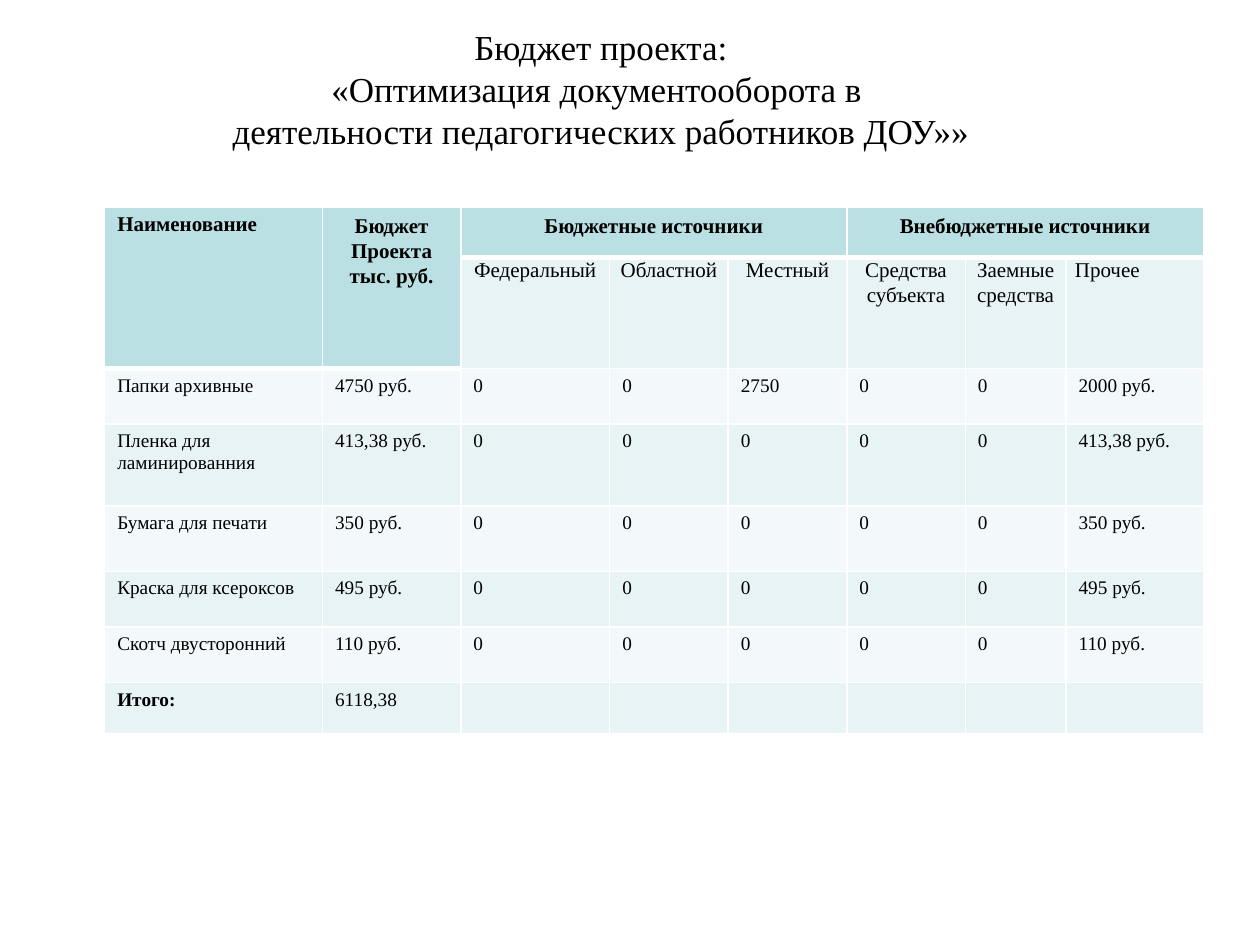
from dataclasses import dataclass

from lxml import etree
from pptx import Presentation
from pptx.dml.color import RGBColor
from pptx.enum.text import MSO_ANCHOR, MSO_AUTO_SIZE, PP_ALIGN
from pptx.oxml.ns import qn
from pptx.util import Cm, Pt

LEFT, CENTER = PP_ALIGN.LEFT, PP_ALIGN.CENTER
TOP, NO_FIT = MSO_ANCHOR.TOP, MSO_AUTO_SIZE.NONE

FONT = "Times New Roman"
BLACK, WHITE = "000000", "FFFFFF"
HEADER, BAND_DARK, BAND_LIGHT = "BBE0E3", "E7F3F4", "F3F9FA"

TITLE = ("Бюджет проекта:\v«Оптимизация документооборота в \v"
         "деятельности педагогических работников ДОУ»»")
COL_WIDTHS = [4.39, 2.79, 3, 2.39, 2.39, 2.39, 2.03, 2.77]
ROW_HEIGHTS = [1.02, 2.24, 1.12, 1.65, 1.32, 1.12, 1.12, 1.02]


@dataclass
class Heading:
    col: int
    text: str
    rows: int = 1
    cols: int = 1
    align: PP_ALIGN = CENTER
    spacing: float = 1.07


@dataclass
class Expense:
    name: str
    budget: str
    local: str = "0"
    other: str = ""

    def values(self) -> list[str]:
        return [self.name, self.budget, "0", "0", self.local, "0", "0",
                self.other or self.budget]


GROUPS = [
    Heading(0, "Наименование", rows=2, align=LEFT, spacing=1.0),
    Heading(1, "Бюджет\nПроекта тыс. руб.", rows=2),
    Heading(2, "Бюджетные источники", cols=3),
    Heading(5, "Внебюджетные источники", cols=3),
]
SOURCES = [
    Heading(2, "Федеральный"),
    Heading(3, "Областной"),
    Heading(4, "Местный"),
    Heading(5, "Средства субъекта"),
    Heading(6, "Заемные средства"),
    Heading(7, "Прочее", align=LEFT),
]
EXPENSES = [
    Expense("Папки архивные", "4750 руб.", "2750", "2000 руб."),
    Expense("Пленка для ламинированния", "413,38 руб."),
    Expense("Бумага для печати", "350 руб."),
    Expense("Краска для ксероксов", "495 руб."),
    Expense("Скотч двусторонний", "110 руб."),
]
TOTAL = ["Итого:", "6118,38"]


def color(value: str) -> RGBColor:
    return RGBColor.from_string(value)


def format_text(tf, size: float, align: PP_ALIGN, bold: bool = False,
                spacing: float = 1.0) -> None:
    for p in tf.paragraphs:
        p.alignment = align
        p.line_spacing = spacing
        for r in p.runs:
            r.font.name = FONT
            r.font.size = Pt(size)
            r.font.bold = bold
            r.font.color.rgb = color(BLACK)


def rule_width(row: int, col: int) -> int:
    """Width of the rule above a cell; it is thick under the main headings."""
    return 3 if row == (2 if col < 2 else 1) else 1


def set_borders(cell, top: int, bottom: int) -> None:
    tc_pr = cell._tc.get_or_add_tcPr()
    sides = {"lnL": 1, "lnR": 1, "lnT": top, "lnB": bottom}
    for i, (side, width) in enumerate(sides.items()):
        ln = etree.Element(qn(f"a:{side}"), w=str(Pt(width)))
        fill = etree.SubElement(ln, qn("a:solidFill"))
        etree.SubElement(fill, qn("a:srgbClr"), val=WHITE)
        tc_pr.insert(i, ln)


def style_cells(table) -> None:
    for row in range(len(ROW_HEIGHTS)):
        for col in range(len(COL_WIDTHS)):
            cell = table.cell(row, col)
            heading = row == 0 or (row == 1 and col < 2)
            band = BAND_DARK if row % 2 else BAND_LIGHT
            cell.fill.solid()
            cell.fill.fore_color.rgb = color(HEADER if heading else band)
            height = cell.span_height if cell.is_merge_origin else 1
            set_borders(cell, rule_width(row, col),
                        rule_width(row + height, col))


def add_headings(table, row: int, headings: list[Heading],
                 bold: bool) -> None:
    for h in headings:
        cell = table.cell(row, h.col)
        if h.rows * h.cols > 1:
            cell.merge(table.cell(row + h.rows - 1, h.col + h.cols - 1))
        cell.text_frame.text = h.text
        format_text(cell.text_frame, 12, h.align, bold, h.spacing)
        if row == 1:
            cell.margin_left = cell.margin_right = Cm(0.18)
            cell.margin_top = cell.margin_bottom = 0


def add_values(table, row: int, values: list[str],
               bold_name: bool = False) -> None:
    for col, value in enumerate(values):
        tf = table.cell(row, col).text_frame
        tf.text = value
        format_text(tf, 11, LEFT, bold_name and col == 0)


def add_budget_table(s) -> None:
    frame = s.shapes.add_table(len(ROW_HEIGHTS), len(COL_WIDTHS),
                               Cm(2.11), Cm(4.17), Cm(sum(COL_WIDTHS)),
                               Cm(sum(ROW_HEIGHTS)))
    table = frame.table
    table.first_row = table.horz_banding = False
    for column, width in zip(table.columns, COL_WIDTHS):
        column.width = Cm(width)
    for row, height in zip(table.rows, ROW_HEIGHTS):
        row.height = Cm(height)
    add_headings(table, 0, GROUPS, bold=True)
    add_headings(table, 1, SOURCES, bold=False)
    for row, expense in enumerate(EXPENSES, start=2):
        add_values(table, row, expense.values())
    add_values(table, len(ROW_HEIGHTS) - 1, TOTAL, bold_name=True)
    style_cells(table)


def add_title(s) -> None:
    title = s.shapes.title
    title.left, title.top = Cm(4.37), Cm(0.38)
    title.width, title.height = Cm(15.49), Cm(3.7)
    tf = title.text_frame
    tf.text = TITLE
    tf.word_wrap = False
    tf.auto_size = NO_FIT
    tf.vertical_anchor = TOP
    format_text(tf, 20, CENTER)


def main() -> None:
    prs = Presentation()
    prs.slide_width, prs.slide_height = Cm(25.4), Cm(19.05)
    s = prs.slides.add_slide(prs.slide_layouts[5])
    add_title(s)
    add_budget_table(s)
    prs.save("out.pptx")


if __name__ == "__main__":
    main()
